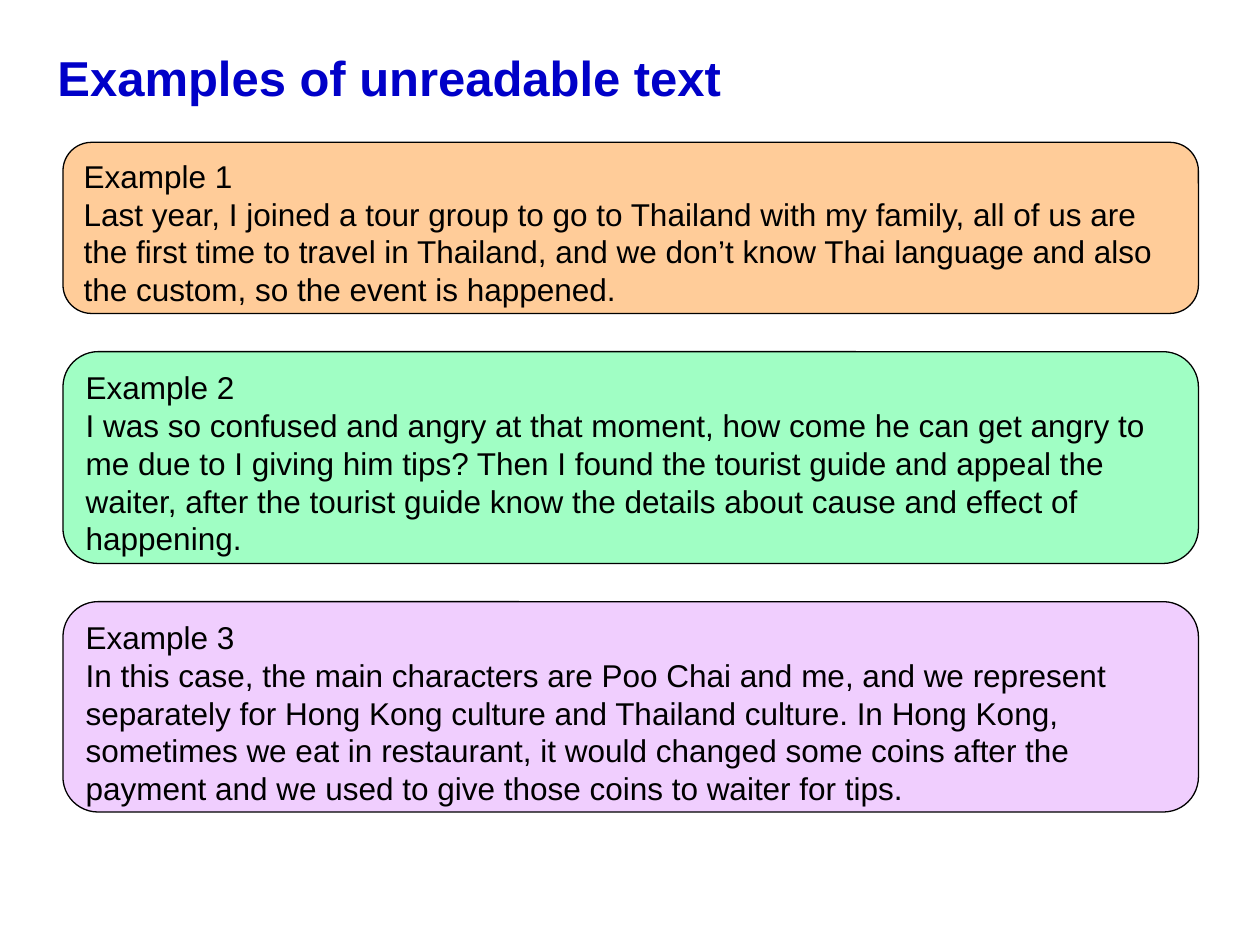
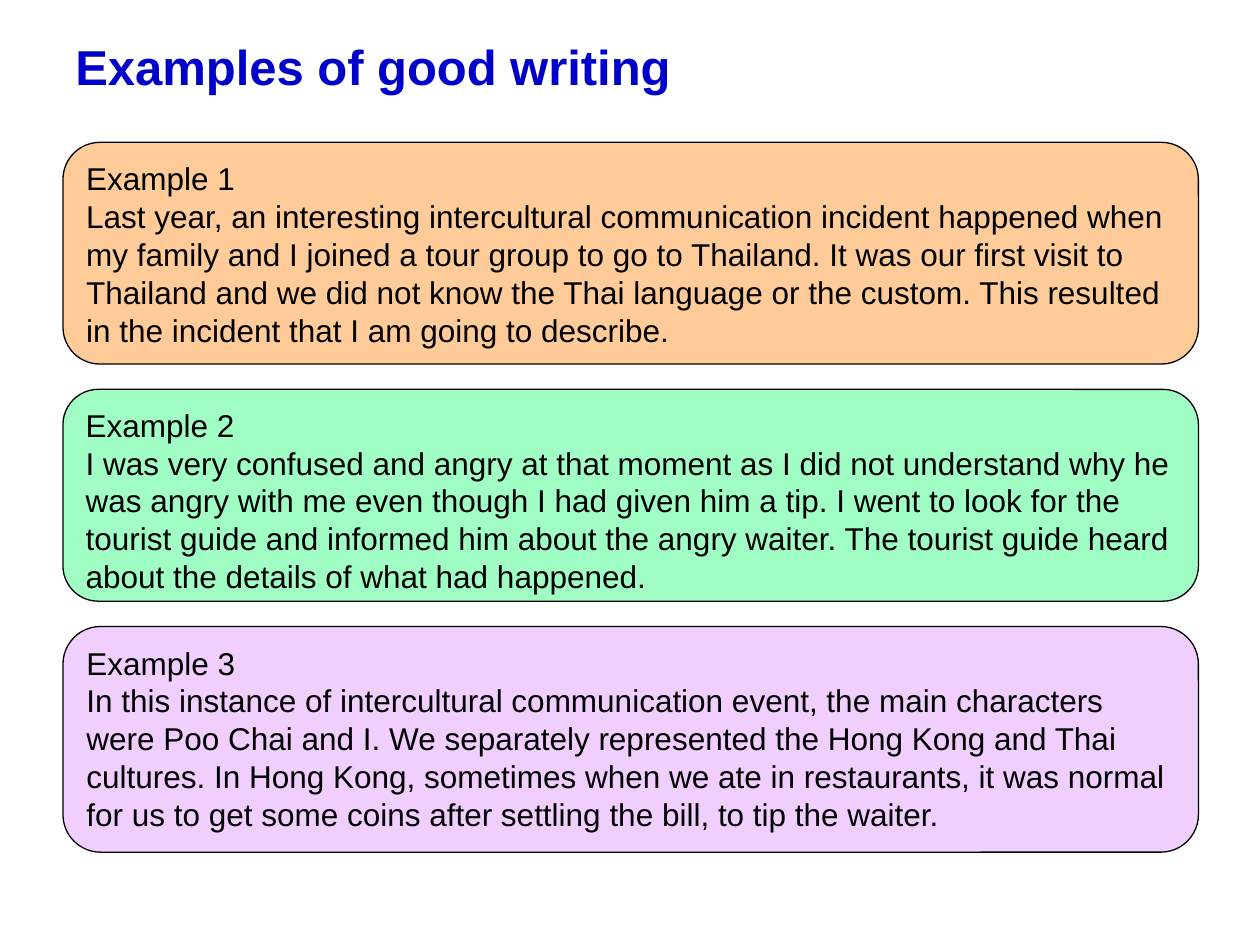
"""Build two slides that compare unreadable text with good writing."""
from pptx import Presentation
from pptx.dml.color import RGBColor as RGB
from pptx.enum.shapes import MSO_SHAPE as Shape
from pptx.enum.text import MSO_ANCHOR as Anchor, PP_ALIGN as Align
from pptx.util import Cm, Pt

FONT = "Arial"
BLUE = RGB(0x00, 0x00, 0xC8)
BLACK = RGB(0x00, 0x00, 0x00)
PEACH = RGB(0xFF, 0xCC, 0x99)
MINT = RGB(0xA0, 0xFE, 0xC4)
LILAC = RGB(0xF0, 0xCE, 0xFE)
FILLS = (PEACH, MINT, LILAC)

LEFT, TOP, WIDTH = 1.27, 2.87, 22.89

POOR = [
    (3.45, "Last year, I joined a tour group to go to Thailand with my family, "
           "all of us are the first time to travel in Thailand, and we don’t know "
           "Thai language and also the custom, so the event is happened."),
    (4.27, "I was so confused and angry at that moment, how come he can get angry "
           "to me due to I giving him tips? Then I found the tourist guide and "
           "appeal the waiter, after the tourist guide know the details about "
           "cause and effect of happening."),
    (4.24, "In this case, the main characters are Poo Chai and me, and we represent "
           "separately for Hong Kong culture and Thailand culture. In Hong Kong, "
           "sometimes we eat in restaurant, it would changed some coins after the "
           "payment and we used to give those coins to waiter for tips."),
]
GOOD = [
    (4.47, "Last year, an interesting intercultural communication incident happened "
           "when my family and I joined a tour group to go to Thailand. It was our "
           "first visit to Thailand and we did not know the Thai language or the "
           "custom. This resulted in the incident that I am going to describe."),
    (4.27, "I was very confused and angry at that moment as I did not understand "
           "why he was angry with me even though I had given him a tip. I went to "
           "look for the tourist guide and informed him about the angry waiter. "
           "The tourist guide heard about the details of what had happened."),
    (4.55, "In this instance of intercultural communication event, the main "
           "characters were Poo Chai and I. We separately represented the Hong Kong "
           "and Thai cultures. In Hong Kong, sometimes when we ate in restaurants, "
           "it was normal for us to get some coins after settling the bill, to tip "
           "the waiter."),
]


def write(frame, lines, size, color, bold=False):
    """Fill a text frame with left-aligned paragraphs from its top."""
    frame.word_wrap = True
    frame.vertical_anchor = Anchor.TOP
    frame.text = "\n".join(lines)
    for para in frame.paragraphs:
        para.alignment = Align.LEFT
        font = para.font
        font.name, font.size, font.bold = FONT, Pt(size), bold
        font.color.rgb = color


def add_title(slide, left, top, text):
    """Place the slide title."""
    box = slide.shapes.add_textbox(Cm(left), Cm(top), Cm(23.9), Cm(1.85))
    write(box.text_frame, [text], 28, BLUE, True)
    box.text_frame.margin_top = Cm(0.22)


def add_card(slide, top, height, fill, lines):
    """Place one rounded example card."""
    card = slide.shapes.add_shape(
        Shape.ROUNDED_RECTANGLE, Cm(LEFT), Cm(top), Cm(WIDTH), Cm(height))
    card.shadow.inherit = False
    card.fill.solid()
    card.fill.fore_color.rgb = fill
    card.line.color.rgb = BLACK
    card.line.width = Pt(0.75)
    write(card.text_frame, lines, 18, BLACK)


def add_slide(deck, title, left, top, gap, cards):
    """Add a slide with a title and a stack of example cards."""
    slide = deck.slides.add_slide(deck.slide_layouts[6])
    add_title(slide, left, top, title)
    y = TOP
    for num, ((height, text), fill) in enumerate(zip(cards, FILLS), 1):
        add_card(slide, y, height, fill, [f"Example {num}", text])
        y += height + gap


def main():
    """Build and save the deck."""
    deck = Presentation()
    deck.slide_width, deck.slide_height = Cm(25.4), Cm(19.05)
    add_slide(deck, "Examples of unreadable text", 0.91, 0.74, 0.77, POOR)
    add_slide(deck, "Examples of good writing", LEFT, 0.51, 0.51, GOOD)
    deck.save("out.pptx")


if __name__ == "__main__":
    main()
